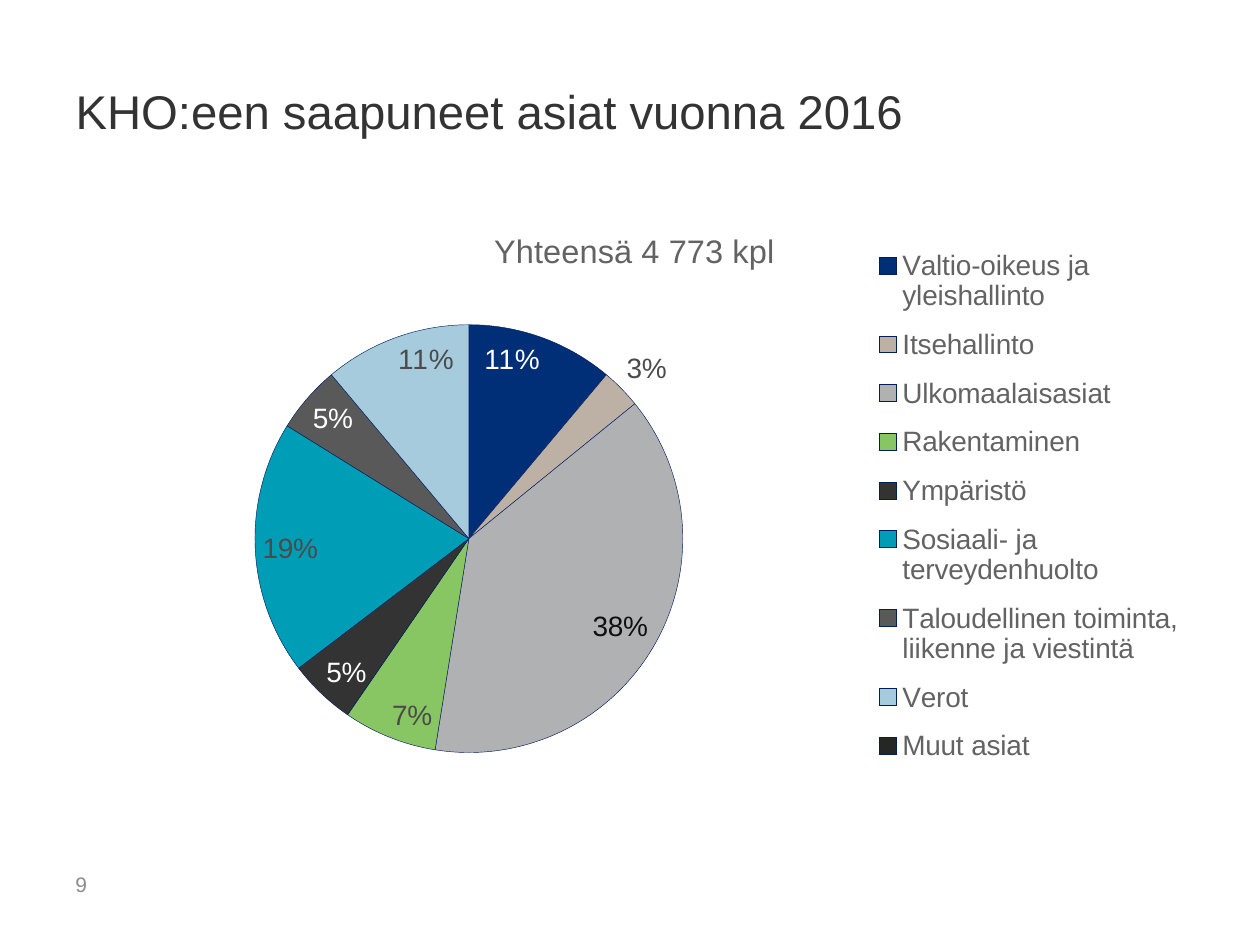
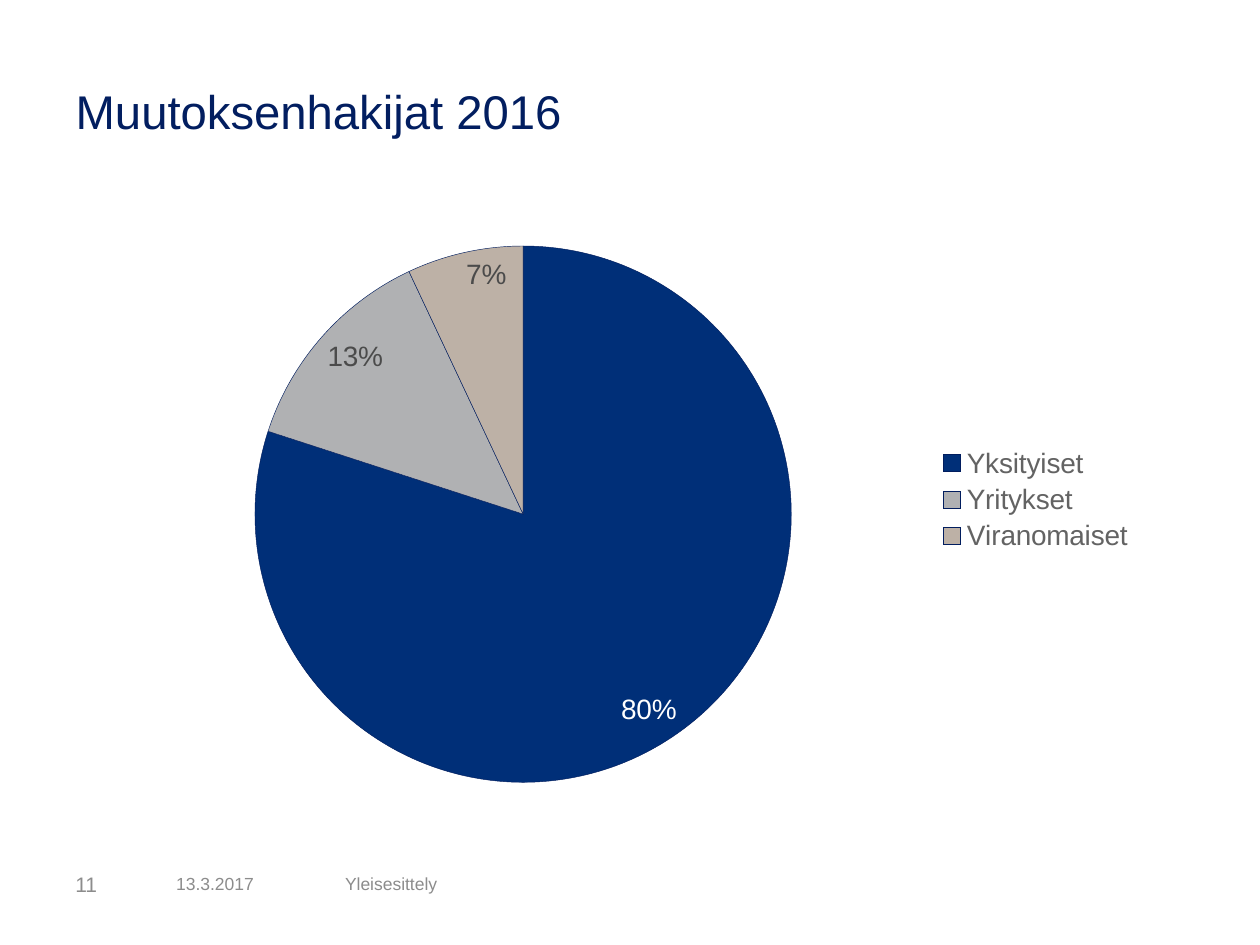
"""Build two slides with pie charts on cases and appellants at the KHO in 2016."""
from lxml import etree
from pptx import Presentation
from pptx.chart.data import CategoryChartData
from pptx.dml.color import RGBColor
from pptx.enum.chart import XL_CHART_TYPE, XL_LABEL_POSITION, XL_LEGEND_POSITION
from pptx.enum.text import MSO_ANCHOR, PP_ALIGN
from pptx.oxml.ns import qn
from pptx.util import Pt

PIE = XL_CHART_TYPE.PIE
INSIDE = XL_LABEL_POSITION.INSIDE_END
OUTSIDE = XL_LABEL_POSITION.OUTSIDE_END
RIGHT = XL_LEGEND_POSITION.RIGHT
MIDDLE = MSO_ANCHOR.MIDDLE
LEFT = PP_ALIGN.LEFT

FONT = "Arial"
COLORS = {
    "white": "FFFFFF", "black": "0F0F0F", "label": "4B4B4B", "legend": "636363",
    "footer": "8C8C8C", "outline": "011D5E", "title": "021E60", "navy": "002F78",
    "sand": "BDB1A6", "silver": "B0B1B3", "green": "88C664", "charcoal": "333333",
    "teal": "009DB6", "gray": "595959", "sky": "A5CBDC", "coal": "262626",
}
TITLE_BOX = (36, 37.4, 648, 51.1)
CHART_BOX = (36, 111.6, 648, 345.6)
FOOTER_BOXES = {
    "number": (36, 491, 57.6, 28.8, 12),
    "date": (93.6, 490.3, 96.5, 28.8, 10),
    "name": (190.1, 490.3, 147.6, 28.8, 10),
}

SLIDES = [
    {
        "title": "KHO:een saapuneet asiat vuonna 2016",
        "title_color": "charcoal",
        "chart_title": "Yhteensä 4 773 kpl",
        "slices": [
            ("Valtio-oikeus ja yleishallinto", 11, "navy", "white", INSIDE),
            ("Itsehallinto", 3, "sand", "label", OUTSIDE),
            ("Ulkomaalaisasiat", 38, "silver", "black", INSIDE),
            ("Rakentaminen", 7, "green", "label", INSIDE),
            ("Ympäristö", 5, "charcoal", "white", INSIDE),
            ("Sosiaali- ja terveydenhuolto", 19, "teal", "label", INSIDE),
            ("Taloudellinen toiminta, liikenne ja viestintä", 5, "gray", "white", INSIDE),
            ("Verot", 11, "sky", "label", INSIDE),
            ("Muut asiat", 0, "coal", "label", OUTSIDE),
        ],
        "pie": (109.7, 74, 244.5, 244.5),
        "legend": (461, 21, 182, 313),
        "footers": {"number": "9"},
    },
    {
        "title": "Muutoksenhakijat 2016",
        "title_color": "title",
        "chart_title": None,
        "slices": [
            ("Yksityiset", 80, "navy", "white", INSIDE),
            ("Yritykset", 13, "silver", "label", INSIDE),
            ("Viranomaiset", 7, "sand", "label", INSIDE),
        ],
        "pie": (109.7, 29, 306.5, 306.5),
        "legend": (496, 141, 120, 66),
        "footers": {"date": "13.3.2017", "number": "11", "name": "Yleisesittely"},
    },
]


def points(box):
    return [Pt(length) for length in box]


def rgb(name):
    return RGBColor.from_string(COLORS[name])


def style_font(font, size, color):
    font.name = FONT
    font.size = Pt(size)
    font.bold = False
    font.color.rgb = rgb(color)


def place_part(part, box, inner=False):
    """Fix the place of a chart part, given in points within the chart frame."""
    for old in part.findall(qn("c:layout")):
        part.remove(old)
    layout = etree.Element(qn("c:layout"))
    manual = etree.SubElement(layout, qn("c:manualLayout"))
    width, height = CHART_BOX[2:]
    settings = [("layoutTarget", "inner")] if inner else []
    settings += [("xMode", "edge"), ("yMode", "edge")]
    settings += [
        (tag, f"{length / full:.4f}")
        for tag, length, full in zip("xywh", box, (width, height, width, height))
    ]
    for tag, value in settings:
        etree.SubElement(manual, qn(f"c:{tag}")).set("val", value)
    overlay = part.find(qn("c:overlay"))
    if overlay is None:
        part.insert(0, layout)
    else:
        overlay.addprevious(layout)


def add_title(page, text, color):
    title = page.shapes.title
    title.left, title.top, title.width, title.height = points(TITLE_BOX)
    title.text_frame.text = text
    title.text_frame.vertical_anchor = MIDDLE
    para = title.text_frame.paragraphs[0]
    para.alignment = LEFT
    style_font(para.font, 27, color)


def add_footer(page, kind, text):
    *place, size = FOOTER_BOXES[kind]
    frame = page.shapes.add_textbox(*points(place)).text_frame
    frame.word_wrap = True
    frame.vertical_anchor = MIDDLE
    frame.text = text
    style_font(frame.paragraphs[0].font, size, "footer")


def color_slices(series, slices):
    labels = series.data_labels
    labels.show_value = False
    labels.show_percentage = True
    labels.number_format = "0%"
    labels.number_format_is_linked = False
    labels.position = INSIDE
    style_font(labels.font, 16, "label")
    for index, (_, _, fill, label_color, position) in enumerate(slices):
        point = series.points[index]
        point.format.fill.solid()
        point.format.fill.fore_color.rgb = rgb(fill)
        point.format.line.color.rgb = rgb("outline")
        point.format.line.width = Pt(0.25)
        if label_color != "label" or position != INSIDE:
            style_font(point.data_label.font, 16, label_color)
            point.data_label.position = position
    for tag, value in (("showVal", "0"), ("showPercent", "1")):
        for flag in series._element.iter(qn(f"c:{tag}")):
            flag.set("val", value)


def add_pie(page, content):
    data = CategoryChartData()
    data.categories = [name for name, *_ in content["slices"]]
    data.add_series("Series 1", [value for _, value, *_ in content["slices"]])
    chart = page.shapes.add_chart(PIE, *points(CHART_BOX), data).chart
    chart.font.name = "Calibri"
    chart.font.size = Pt(10)
    chart.font.color.rgb = rgb("black")

    plot = chart.plots[0]
    plot.vary_by_categories = True
    color_slices(plot.series[0], content["slices"])
    place_part(chart._chartSpace.chart.plotArea, content["pie"], inner=True)

    chart.has_legend = True
    chart.legend.position = RIGHT
    chart.legend.include_in_layout = False
    style_font(chart.legend.font, 16, "legend")
    place_part(chart.legend._element, content["legend"])

    chart.has_title = content["chart_title"] is not None
    if chart.has_title:
        frame = chart.chart_title.text_frame
        frame.text = content["chart_title"]
        style_font(frame.paragraphs[0].font, 18.6, "legend")
        place_part(chart.chart_title._element, (243, 16))


def main():
    deck = Presentation()
    deck.slide_width, deck.slide_height = Pt(720), Pt(540)
    for content in SLIDES:
        page = deck.slides.add_slide(deck.slide_layouts[5])
        page.background.fill.solid()
        page.background.fill.fore_color.rgb = rgb("white")
        add_title(page, content["title"], content["title_color"])
        add_pie(page, content)
        for kind, text in content["footers"].items():
            add_footer(page, kind, text)
    deck.save("out.pptx")


if __name__ == "__main__":
    main()
